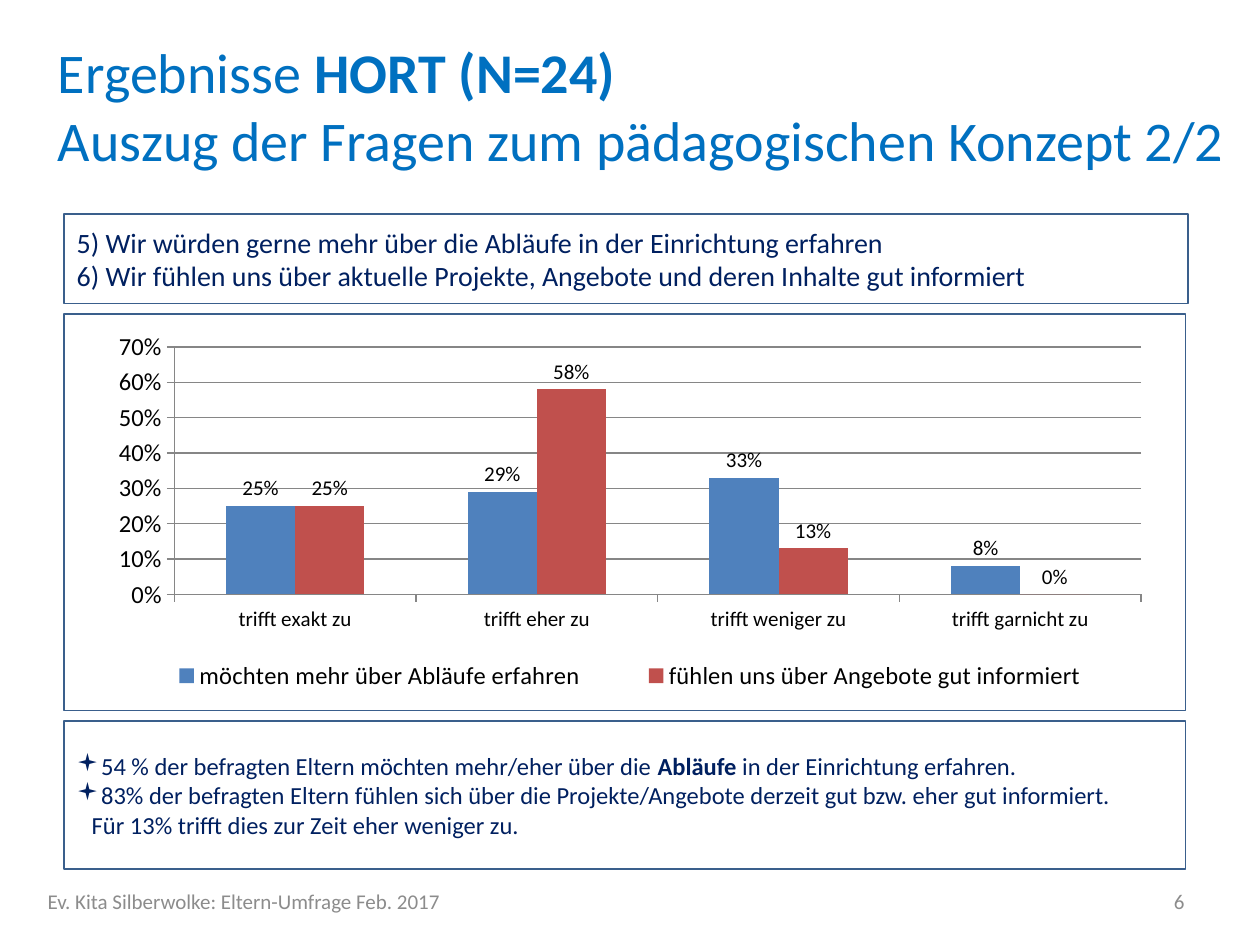
from dataclasses import dataclass

from lxml.etree import SubElement
from pptx import Presentation
from pptx.chart.data import CategoryChartData
from pptx.dml.color import RGBColor
from pptx.enum.chart import XL_CHART_TYPE, XL_LABEL_POSITION, XL_LEGEND_POSITION, XL_TICK_MARK
from pptx.enum.shapes import MSO_SHAPE
from pptx.enum.text import MSO_ANCHOR, MSO_AUTO_SIZE, PP_ALIGN
from pptx.oxml.ns import qn
from pptx.util import Inches, Pt

SLIDE_WIDTH, SLIDE_HEIGHT = Inches(10), Inches(7.5)
COLUMNS, ROWS = 100, 75


@dataclass(frozen=True)
class Theme:
    font: str = "Calibri"
    title: str = "0070C0"
    body: str = "002060"
    muted: str = "8C8C8C"
    border: str = "3A5F8C"
    axis: str = "868686"
    label: str = "000000"
    series: tuple = ("4F81BD", "C0504D")
    title_size: int = 32
    question_size: int = 16
    finding_size: int = 14
    scale_size: int = 14
    small_size: int = 12


THEME = Theme()


def area(left, top, width, height):
    column, row = SLIDE_WIDTH / COLUMNS, SLIDE_HEIGHT / ROWS
    return int(left * column), int(top * row), int(width * column), int(height * row)


def style_font(font, size, color, bold=False):
    font.name = THEME.font
    font.size = Pt(size)
    font.bold = bold
    font.color.rgb = RGBColor.from_string(color)


def write(text_frame, paragraphs, size, color, alignment=PP_ALIGN.LEFT):
    text_frame.word_wrap = True
    text_frame.auto_size = MSO_AUTO_SIZE.NONE
    text_frame.vertical_anchor = MSO_ANCHOR.MIDDLE
    for index, runs in enumerate(paragraphs):
        paragraph = text_frame.add_paragraph() if index else text_frame.paragraphs[0]
        paragraph.alignment = alignment
        for text, bold in runs:
            if text == "\n":
                paragraph.add_line_break()
                continue
            run = paragraph.add_run()
            run.text = text
            style_font(run.font, size, color, bold)


def add_title(slide, paragraphs):
    title = slide.shapes.title
    title.left, title.top, title.width, title.height = area(3.6, 2.8, 96.4, 11.1)
    write(title.text_frame, paragraphs, THEME.title_size, THEME.title)


def add_label(slide, text, place, alignment):
    box = slide.shapes.add_textbox(*place)
    write(box.text_frame, [[(text, False)]], THEME.small_size, THEME.muted, alignment)


def add_panel(slide, place):
    panel = slide.shapes.add_shape(MSO_SHAPE.RECTANGLE, *place)
    panel.shadow.inherit = False
    panel.fill.background()
    panel.line.color.rgb = RGBColor.from_string(THEME.border)
    panel.line.width = Pt(1)
    return panel


def add_bullet(paragraph, indent):
    properties = paragraph._p.get_or_add_pPr()
    properties.set("marL", str(Inches(indent)))
    properties.set("indent", str(-Inches(indent)))
    SubElement(properties, qn("a:buFont"), typeface="Wingdings")
    SubElement(properties, qn("a:buChar"), char="▪")


def set_layout(parent, values, inner=False):
    for old in parent.findall(qn("c:layout")):
        parent.remove(old)
    layout = SubElement(parent, qn("c:layout"))
    manual = SubElement(layout, qn("c:manualLayout"))
    if inner:
        SubElement(manual, qn("c:layoutTarget"), val="inner")
    for name in ("xMode", "yMode"):
        SubElement(manual, qn(f"c:{name}"), val="edge")
    for name, value in zip("xywh", values):
        SubElement(manual, qn(f"c:{name}"), val=str(value))
    parent.remove(layout)
    parent.insert(0 if inner else 1, layout)


def style_axis(axis, size):
    axis.major_tick_mark = XL_TICK_MARK.OUTSIDE
    axis.minor_tick_mark = XL_TICK_MARK.NONE
    axis.format.line.color.rgb = RGBColor.from_string(THEME.axis)
    style_font(axis.tick_labels.font, size, THEME.label)


def style_series(series, color):
    series.format.fill.solid()
    series.format.fill.fore_color.rgb = RGBColor.from_string(color)
    series.invert_if_negative = False
    labels = series.data_labels
    labels.show_value = True
    labels.number_format, labels.number_format_is_linked = "0%", False
    labels.position = XL_LABEL_POSITION.OUTSIDE_END
    style_font(labels.font, THEME.small_size, THEME.label)


def add_bar_chart(slide, place, categories, answers):
    data = CategoryChartData(number_format="0%")
    data.categories = categories
    for name, values in answers.items():
        data.add_series(name, values)
    chart = slide.shapes.add_chart(XL_CHART_TYPE.COLUMN_CLUSTERED, *place, data).chart
    chart.has_title = False
    style_font(chart.font, THEME.scale_size, THEME.label)

    plot = chart.plots[0]
    plot.vary_by_categories = False
    plot.gap_width, plot.overlap = 150, 0
    for series, color in zip(plot.series, THEME.series):
        style_series(series, color)

    style_axis(chart.category_axis, THEME.small_size)
    scale = chart.value_axis
    style_axis(scale, THEME.scale_size)
    scale.minimum_scale, scale.maximum_scale, scale.major_unit = 0, 0.7, 0.1
    scale.tick_labels.number_format = "0%"
    scale.tick_labels.number_format_is_linked = False
    scale.has_major_gridlines = True
    scale.major_gridlines.format.line.color.rgb = RGBColor.from_string(THEME.axis)

    chart.has_legend = True
    legend = chart.legend
    legend.position = XL_LEGEND_POSITION.BOTTOM
    legend.include_in_layout = False
    style_font(legend.font, THEME.scale_size, THEME.label)
    set_layout(legend._element, (0.04, 0.85, 0.92, 0.12))
    set_layout(chart._chartSpace.chart.plotArea, (0.09, 0.06, 0.87, 0.64), inner=True)


def main():
    presentation = Presentation()
    presentation.slide_width, presentation.slide_height = SLIDE_WIDTH, SLIDE_HEIGHT
    slide = presentation.slides.add_slide(presentation.slide_layouts[5])

    add_title(slide, [
        [("Ergebnisse ", False), ("HORT (N=24)", True)],
        [("Auszug der Fragen zum pädagogischen Konzept 2/2", False)],
    ])

    panels, top, gap = [], 17, 0.8
    for width, height in ((89.2, 7.1), (89, 31.5), (89, 11.8)):
        panels.append(add_panel(slide, area(5.1, top, width, height)))
        top += height + gap
    questions, _, findings = panels

    write(questions.text_frame, [
        [("5) Wir würden gerne mehr über die Abläufe in der Einrichtung erfahren", False)],
        [("6) Wir fühlen uns über aktuelle Projekte, Angebote und deren Inhalte gut informiert", False)],
    ], THEME.question_size, THEME.body)

    write(findings.text_frame, [
        [("54 % der befragten Eltern möchten mehr/eher über die ", False),
         ("Abläufe", True), (" in der Einrichtung erfahren.", False)],
        [("83% der befragten Eltern fühlen sich über die Projekte/Angebote "
          "derzeit gut bzw. eher gut informiert.", False),
         ("\n", False),
         ("Für 13% trifft dies zur Zeit eher weniger zu.", False)],
    ], THEME.finding_size, THEME.body)
    for paragraph, indent in zip(findings.text_frame.paragraphs, (0.07, 0.12)):
        add_bullet(paragraph, indent)

    add_bar_chart(
        slide,
        area(5.9, 25.7, 88.2, 30.7),
        ("trifft exakt zu", "trifft eher zu", "trifft weniger zu", "trifft garnicht zu"),
        {
            "möchten mehr über Abläufe erfahren": (0.25, 0.29, 0.33, 0.08),
            "fühlen uns über Angebote gut informiert": (0.25, 0.58, 0.13, 0),
        },
    )

    add_label(slide, "Ev. Kita Silberwolke: Eltern-Umfrage Feb. 2017",
              area(2.8, 69.5, 63.1, 4), PP_ALIGN.LEFT)
    add_label(slide, "6", area(71.7, 69.5, 23.3, 4), PP_ALIGN.RIGHT)
    presentation.save("out.pptx")


if __name__ == "__main__":
    main()
